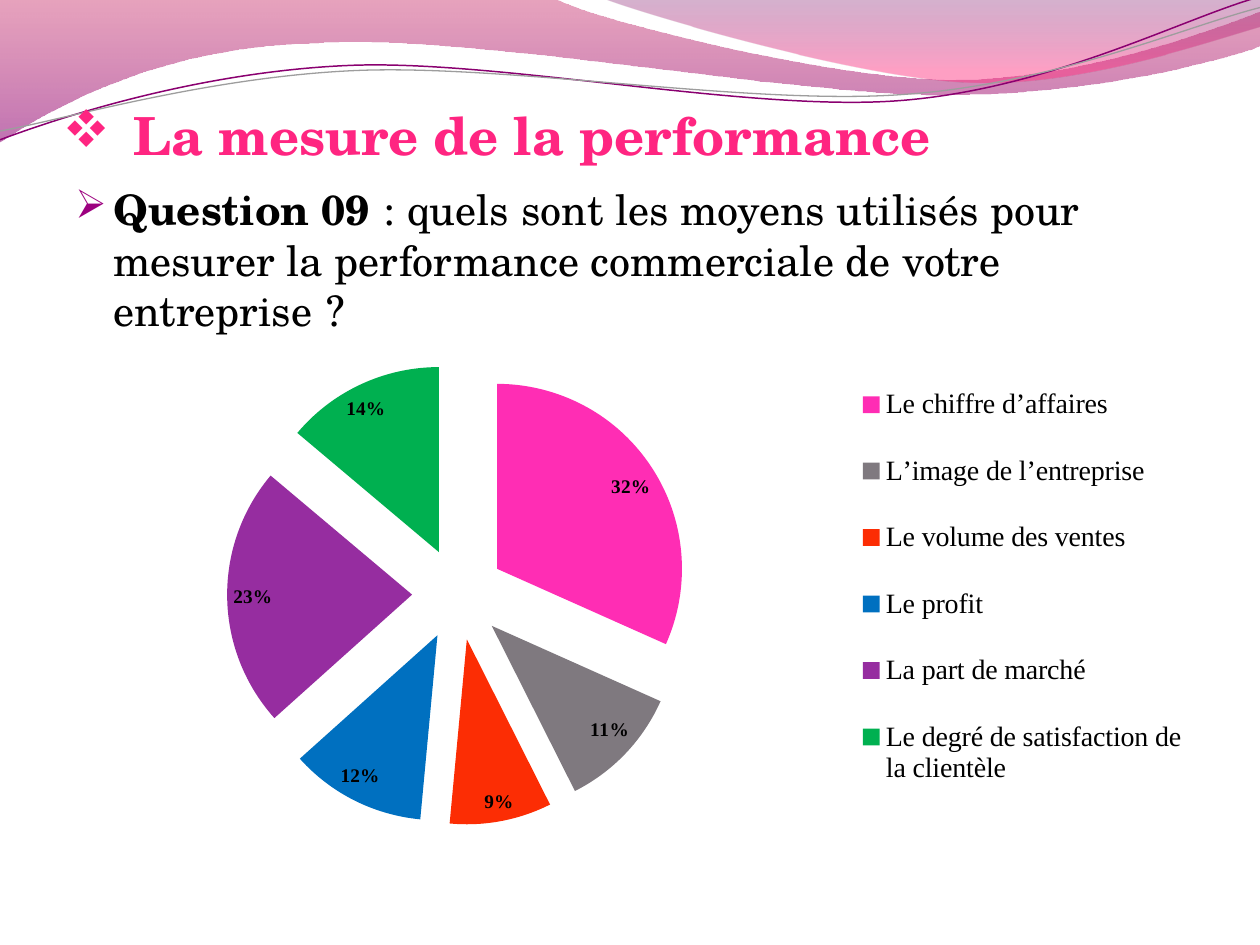
from lxml import etree
from pptx import Presentation
from pptx.chart.data import CategoryChartData
from pptx.dml.color import RGBColor
from pptx.enum.chart import XL_CHART_TYPE as ChartType
from pptx.enum.chart import XL_LABEL_POSITION as LabelPos
from pptx.enum.chart import XL_LEGEND_POSITION as LegendPos
from pptx.enum.text import MSO_ANCHOR as Anchor
from pptx.oxml.ns import qn
from pptx.util import Inches, Pt

COLORS = {
    "black": "000000", "title": "FF2581", "bullet": "9C007F",
    "wave_pink": "C9326D", "wave_purple": "8E0073",
    "crest_purple": "73005E", "crest_pink": "FF2D7F",
    "line_purple": "8A0070", "line_gray": "9D9D9D",
}
SLICES = [
    ("Le chiffre d’affaires", 32, "FF2DB4"),
    ("L’image de l’entreprise", 11, "7F797F"),
    ("Le volume des ventes", 9, "FC2D04"),
    ("Le profit", 12, "0070C0"),
    ("La part de marché", 23, "962DA0"),
    ("Le degré de satisfaction de la clientèle", 14, "00B050"),
]
SERIF = "TeX Gyre Schola"
ROMAN = "Times New Roman"
NBSP = chr(160)  # no-break space of French punctuation


def rgb(name):
    return RGBColor.from_string(COLORS[name])


def add_outline(s, path, close):
    """Freeform from segments: 2 numbers make a line, 6 a cubic curve."""
    points = [(Inches(seg[i]), Inches(seg[i + 1]))
              for seg in path for i in range(0, len(seg), 2)]
    builder = s.shapes.build_freeform(*points[0])
    builder.add_line_segments(points[1:], close=close)
    sp = builder.convert_to_shape()
    sp.shadow.inherit = False

    # Join each run of three points into one curve
    lines = iter(list(sp._element.iter(qn("a:lnTo"))))
    for seg in path[1:]:
        first = next(lines)
        if len(seg) == 6:
            first.tag = qn("a:cubicBezTo")
            for _ in range(2):
                extra = next(lines)
                first.append(extra[0])
                extra.getparent().remove(extra)
    return sp


def add_wave(s, path, stops):
    """Closed shape with a downward gradient; stops are (position, colour, opacity %)."""
    sp = add_outline(s, path, True)
    sp.line.fill.background()
    sp.fill.gradient()
    sp.fill.gradient_angle = 270
    nodes = sp._element.spPr.iter(qn("a:gs"))
    for stop, gs, (pos, color, opacity) in zip(sp.fill.gradient_stops, nodes, stops):
        stop.position = pos
        stop.color.rgb = rgb(color)
        etree.SubElement(gs[0], qn("a:alpha"), val=str(opacity * 1000))


def add_curve(s, path, color, width):
    sp = add_outline(s, path, False)
    sp.fill.background()
    sp.line.color.rgb = rgb(color)
    sp.line.width = Pt(width)


def add_bullet_text(s, box, runs, size, color, bullet, indent,
                    bullet_color=None, bullet_size=100):
    """Text box with one paragraph and a Wingdings bullet; runs are (text, bold)."""
    tf = s.shapes.add_textbox(*map(Inches, box)).text_frame
    tf.word_wrap = True
    p = tf.paragraphs[0]
    for text, bold in runs:
        r = p.add_run()
        r.text = text
        r.font.name, r.font.size, r.font.bold = SERIF, Pt(size), bold
        r.font.color.rgb = rgb(color)
    pPr = p._p.get_or_add_pPr()
    pPr.set("marL", str(Inches(indent)))
    pPr.set("indent", str(-Inches(indent)))
    clr = etree.SubElement(pPr, qn("a:buClr"))
    etree.SubElement(clr, qn("a:srgbClr"), val=COLORS[bullet_color or color])
    etree.SubElement(pPr, qn("a:buSzPct"), val=str(bullet_size * 1000))
    etree.SubElement(pPr, qn("a:buFont"), typeface="Wingdings",
                     pitchFamily="2", charset="2")
    etree.SubElement(pPr, qn("a:buChar"), char=bullet)
    return tf


def set_layout(parent, index, inner, **fractions):
    """Place a chart part by fractions of the chart area."""
    for old in parent.findall(qn("c:layout")):
        parent.remove(old)
    layout = etree.Element(qn("c:layout"))
    manual = etree.SubElement(layout, qn("c:manualLayout"))
    if inner:
        etree.SubElement(manual, qn("c:layoutTarget"), val="inner")
    for mode in ("xMode", "yMode"):
        etree.SubElement(manual, qn("c:" + mode), val="edge")
    for key, value in fractions.items():
        etree.SubElement(manual, qn("c:" + key), val=str(value))
    parent.insert(index, layout)


def add_pie(s, box):
    data = CategoryChartData()
    data.categories = [name for name, _, _ in SLICES]
    data.add_series("Series 1", [value for _, value, _ in SLICES])
    chart = s.shapes.add_chart(ChartType.PIE, *map(Inches, box), data).chart
    chart.has_title = False
    chart.font.name, chart.font.size = "TeX Gyre Pagella", Pt(10)
    chart.font.color.rgb = rgb("black")

    # Exploded slices
    plot = chart.plots[0]
    plot.vary_by_categories = True
    series = plot.series[0]
    for i, (_, _, color) in enumerate(SLICES):
        fill = series.points[i].format.fill
        fill.solid()
        fill.fore_color.rgb = RGBColor.from_string(color)
    explosion = etree.Element(qn("c:explosion"), val="25")
    series._element.find(qn("c:dPt")).addprevious(explosion)

    # Percent labels
    plot.has_data_labels = True
    labels = plot.data_labels
    labels.show_percentage, labels.show_value = True, False
    labels.number_format, labels.number_format_is_linked = "0%", False
    labels.position = LabelPos.BEST_FIT
    labels.font.name, labels.font.size, labels.font.bold = ROMAN, Pt(11), True
    labels.font.color.rgb = rgb("black")

    # Legend
    chart.has_legend = True
    legend = chart.legend
    legend.position = LegendPos.RIGHT
    legend.include_in_layout = False
    legend.font.name, legend.font.size = ROMAN, Pt(16)
    legend.font.color.rgb = rgb("black")
    set_layout(legend._element, 1, False, x=0.71, y=0.02, w=0.29, h=0.93)
    plot_area = chart._chartSpace.find(".//" + qn("c:plotArea"))
    set_layout(plot_area, 0, True, x=0.14, y=0.03, w=0.41, h=0.94)


def main():
    prs = Presentation()
    prs.slide_width, prs.slide_height = Inches(10), Inches(7.5)
    s = prs.slides.add_slide(prs.slide_layouts[6])

    # Header waves
    add_wave(s, [(0, 0), (4.4, -0.01), (4.76, 0.17, 6.64, 0.63, 7.58, 0.63),
                 (8.53, 0.63, 9.58, 0.26, 10, 0.09), (10.01, 0.36),
                 (9.83, 0.44, 8.7, 0.76, 7.46, 0.75),
                 (6.22, 0.75, 3.82, 0.28, 2.57, 0.34),
                 (1.29, 0.36, 0.46, 0.83, -0.01, 1.13)],
             [(0, "wave_pink", 45), (1, "wave_purple", 55)])
    add_wave(s, [(4.79, -0.01), (5.09, 0.11, 6.82, 0.62, 7.69, 0.65),
                 (8.56, 0.69, 9.61, 0.32, 10, 0.21), (10, 0)],
             [(0, "crest_purple", 30), (0.8, "crest_pink", 45)])
    add_curve(s, [(0, 1.11), (0.48, 0.93, 1.58, 0.57, 2.77, 0.52),
                  (3.95, 0.47, 5.93, 0.89, 7.13, 0.8),
                  (8.33, 0.71, 9.38, 0.15, 9.98, -0.02)], "line_purple", 0.85)
    add_curve(s, [(0, 1.04), (0.47, 0.96, 1.64, 0.61, 2.83, 0.56),
                  (4.03, 0.51, 5.97, 0.84, 7.17, 0.75),
                  (8.36, 0.67, 9.41, 0.21, 10, 0.06)], "line_gray", 0.75)

    # Title
    tf = add_bullet_text(s, (0.5, 0.62, 9, 0.7),
                         [("La mesure de la performance" + NBSP, True)],
                         30, "title", "v", 0.56)
    tf.vertical_anchor = Anchor.BOTTOM
    tf.margin_left = tf.margin_right = tf.margin_bottom = 0

    # Question
    question = (f"{NBSP}: quels sont les moyens utilisés pour mesurer la "
                f"performance commerciale de votre entreprise{NBSP}?")
    tf = add_bullet_text(s, (0.5, 1.41, 9.03, 1.33),
                         [("Question 09", True), (question, False)],
                         24, "black", "Ø", 0.3, "bullet", 95)
    tf.paragraphs[0].space_before = Pt(4.8)

    # Answers
    add_pie(s, (0.55, 2.73, 8.95, 3.97))
    prs.save("out.pptx")


if __name__ == "__main__":
    main()
